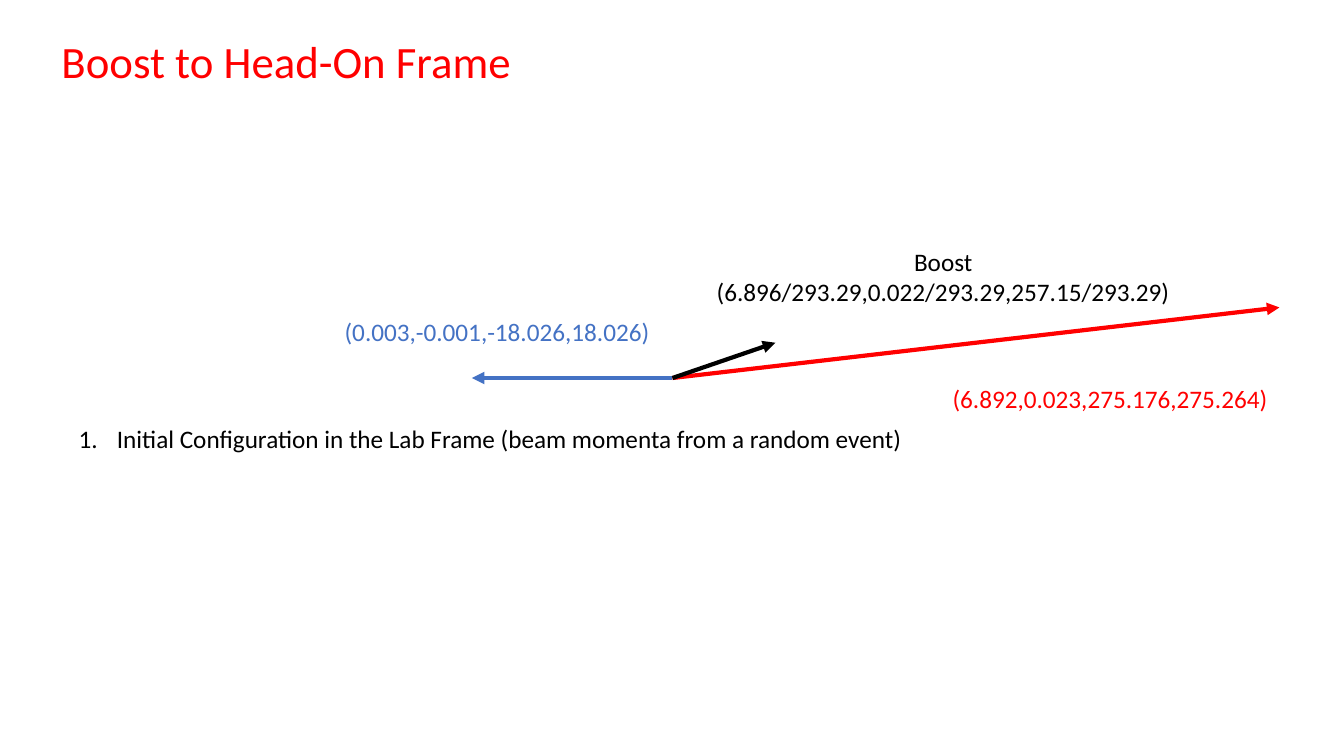
from lxml import etree
from pptx import Presentation
from pptx.dml.color import RGBColor
from pptx.enum.shapes import MSO_CONNECTOR
from pptx.enum.text import MSO_ANCHOR, MSO_AUTO_SIZE, PP_ALIGN
from pptx.oxml.ns import qn
from pptx.util import Inches, Pt

STRAIGHT = MSO_CONNECTOR.STRAIGHT
TOP = MSO_ANCHOR.TOP
NO_AUTOFIT = MSO_AUTO_SIZE.NONE
LEFT, CENTER = PP_ALIGN.LEFT, PP_ALIGN.CENTER

FONT = "Calibri"
RED, BLUE, BLACK = "FF0000", "4472C4", "000000"
ORIGIN = (6.67, 3.75)


def rgb(color):
    return RGBColor.from_string(color)


def write_text(shape, box, lines, color, size=18, align=LEFT):
    """Place a text shape and fill it with one paragraph per line."""
    shape.left, shape.top, shape.width, shape.height = map(Inches, box)
    frame = shape.text_frame
    frame.word_wrap = True
    frame.auto_size = NO_AUTOFIT
    frame.vertical_anchor = TOP
    frame.text = "\n".join(lines)
    for paragraph in frame.paragraphs:
        paragraph.alignment = align
        paragraph.space_before = Pt(0)
        paragraph.font.name = FONT
        paragraph.font.size = Pt(size)
        paragraph.font.color.rgb = rgb(color)


def add_label(slide, box, lines, color, align=LEFT):
    label = slide.shapes.add_textbox(*map(Inches, box))
    write_text(label, box, lines, color, align=align)


def add_momentum_arrow(slide, tip, color):
    arrow = slide.shapes.add_connector(STRAIGHT, *map(Inches, ORIGIN + tip))
    arrow.line.color.rgb = rgb(color)
    arrow.line.width = Pt(3)
    etree.SubElement(arrow.line._get_or_add_ln(), qn("a:tailEnd"), type="triangle")
    etree.SubElement(arrow._element.spPr, qn("a:effectLst"))


def number_paragraphs(shape, indent):
    for paragraph in shape.text_frame.paragraphs:
        properties = paragraph._p.get_or_add_pPr()
        properties.set("marL", str(Inches(indent)))
        properties.set("indent", str(-Inches(indent)))
        bullet_font = etree.Element(qn("a:buFont"), typeface="+mj-lt")
        numbering = etree.Element(qn("a:buAutoNum"), type="arabicPeriod")
        default_run = properties.find(qn("a:defRPr"))
        default_run.addprevious(bullet_font)
        default_run.addprevious(numbering)


def main():
    deck = Presentation()
    deck.slide_width, deck.slide_height = Inches(13.33), Inches(7.5)
    slide = deck.slides.add_slide(deck.slide_layouts[1])

    title, steps = slide.placeholders
    write_text(title, (0.51, 0.28, 9.19, 0.64), ["Boost to Head-On Frame"], RED, size=32)
    write_text(
        steps,
        (0.68, 4.15, 9.11, 0.4),
        ["Initial Configuration in the Lab Frame (beam momenta from a random event)"],
        BLACK,
    )
    number_paragraphs(steps, 0.38)

    for tip, color in (((4.68, 3.75), BLUE), ((12.69, 3.05), RED), ((7.69, 3.4), BLACK)):
        add_momentum_arrow(slide, tip, color)

    add_label(slide, (3.32, 3.09, 3.34, 0.4), ["(0.003,-0.001,-18.026,18.026)"], BLUE)
    add_label(slide, (9.35, 3.75, 3.34, 0.4), ["(6.892,0.023,275.176,275.264)"], RED)
    add_label(
        slide,
        (6.81, 2.39, 5.09, 0.71),
        ["Boost", "(6.896/293.29,0.022/293.29,257.15/293.29)"],
        BLACK,
        CENTER,
    )
    deck.save("out.pptx")


if __name__ == "__main__":
    main()
